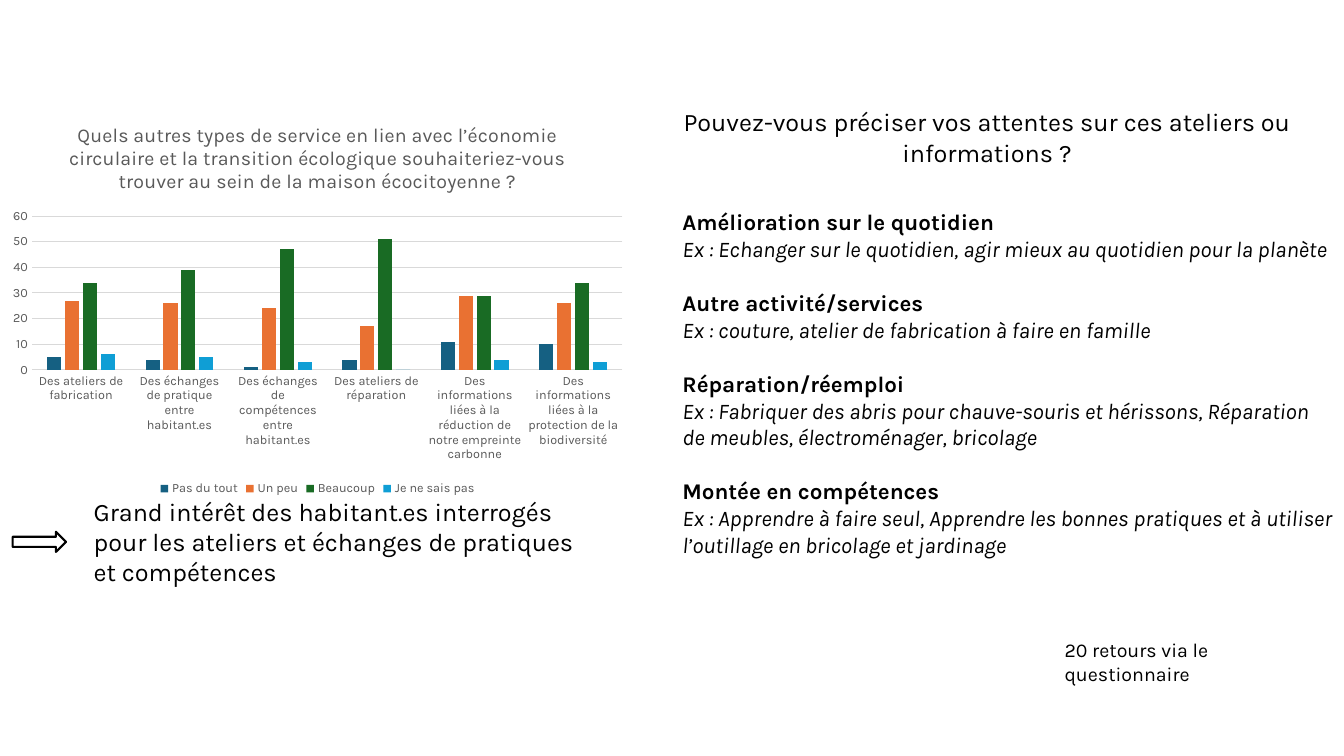
from dataclasses import dataclass

from lxml import etree
from pptx import Presentation
from pptx import util as u
from pptx.chart.data import CategoryChartData
from pptx.dml.color import RGBColor
from pptx.enum import chart as charts, shapes, text


@dataclass(frozen=True)
class Theme:
    font: str = "Karla"
    ink: str = "000000"
    paper: str = "FFFFFF"
    muted: str = "595959"
    rule: str = "D9D9D9"
    heading: int = 18
    body: int = 16
    note: int = 14
    axis: int = 9
    gap: float = 19.2


theme = Theme()


def style_font(font, size, color=theme.ink, bold=False, italic=False):
    formats = {"name": theme.font, "size": u.Pt(size), "bold": bold, "italic": italic}
    for attribute, value in formats.items():
        setattr(font, attribute, value)
    font.color.rgb = RGBColor.from_string(color)


def add_text(box, lines, size, align=text.PP_ALIGN.LEFT):
    frame = slide.shapes.add_textbox(*map(u.Inches, box)).text_frame
    frame.word_wrap = True
    for index, (words, bold, italic) in enumerate(lines):
        paragraph = frame.add_paragraph() if index else frame.paragraphs[0]
        paragraph.alignment = align
        if index and bold:
            paragraph.space_before = u.Pt(theme.gap)
        run = paragraph.add_run()
        run.text = words
        style_font(run.font, size, bold=bold, italic=italic)


presentation = Presentation()
presentation.slide_width = u.Inches(13.33)
presentation.slide_height = u.Inches(7.5)
slide = presentation.slides.add_slide(presentation.slide_layouts[6])

question = "Pouvez-vous préciser vos attentes sur ces ateliers ou informations ?"
add_text((6.24, 1.01, 7.1, 0.71), [(question, False, False)], theme.heading, text.PP_ALIGN.CENTER)

conclusion = "Grand intérêt des habitant.es interrogés pour les ateliers et échanges de pratiques et compétences"
add_text((0.83, 4.87, 5.08, 1.01), [(conclusion, False, False)], theme.heading)

arrow = slide.shapes.add_shape(
    shapes.MSO_SHAPE.DOWN_ARROW, *map(u.Inches, (0.29, 5.11, 0.2, 0.53))
)
arrow.rotation = 270
arrow.shadow.inherit = False
arrow.fill.solid()
arrow.fill.fore_color.rgb = RGBColor.from_string(theme.paper)
arrow.line.color.rgb = RGBColor.from_string(theme.ink)
arrow.line.width = u.Pt(1.5)

add_text((10.46, 6.28, 2.75, 0.34), [("20 retours via le questionnaire", False, False)], theme.note)

answers = {
    "Pas du tout": ("156082", (5, 4, 1, 4, 11, 10)),
    "Un peu": ("E97132", (27, 26, 24, 17, 29, 26)),
    "Beaucoup": ("196B24", (34, 39, 47, 51, 29, 34)),
    "Je ne sais pas": ("0F9ED5", (6, 5, 3, 0, 4, 3)),
}
survey = CategoryChartData()
survey.categories = [
    "Des ateliers de fabrication",
    "Des échanges de pratique entre habitant.es",
    "Des échanges de compétences entre habitant.es",
    "Des ateliers de réparation",
    "Des informations liées à la réduction de notre empreinte carbonne",
    "Des informations liées à la protection de la biodiversité",
]
for answer, (color, counts) in answers.items():
    survey.add_series(answer, counts)
services = slide.shapes.add_chart(
    charts.XL_CHART_TYPE.COLUMN_CLUSTERED, *map(u.Inches, (0, 1.05, 6.3, 3.91)), survey
).chart
style_font(services.font, 10)

services.has_title = True
title = services.chart_title
title.include_in_layout = False
title_run = title.text_frame.paragraphs[0].add_run()
title_run.text = (
    "Quels autres types de service en lien avec l’économie circulaire et la transition "
    "écologique souhaiteriez-vous trouver au sein de la maison écocitoyenne ?"
)
style_font(title_run.font, theme.note, theme.muted)

services.has_legend = True
services.legend.position = charts.XL_LEGEND_POSITION.BOTTOM
services.legend.include_in_layout = False
style_font(services.legend.font, theme.axis, theme.muted)

for axis in (services.category_axis, services.value_axis):
    axis.major_tick_mark = axis.minor_tick_mark = charts.XL_TICK_MARK.NONE
    style_font(axis.tick_labels.font, theme.axis, theme.muted)
counts_axis = services.value_axis
for attribute, value in {"minimum_scale": 0, "maximum_scale": 60, "major_unit": 10}.items():
    setattr(counts_axis, attribute, value)
counts_axis.format.line.fill.background()
for line in (services.category_axis.format.line, counts_axis.major_gridlines.format.line):
    line.color.rgb = RGBColor.from_string(theme.rule)
    line.width = u.Pt(0.75)

bars = services.plots[0]
for attribute, value in {"gap_width": 219, "overlap": -27, "vary_by_categories": False}.items():
    setattr(bars, attribute, value)
for series, (color, counts) in zip(bars.series, answers.values()):
    series.format.fill.solid()
    series.format.fill.fore_color.rgb = RGBColor.from_string(color)

plot_area = services.element.chart.plotArea
for previous in plot_area.findall("{*}layout"):
    plot_area.remove(previous)
chart_ns = "{" + etree.QName(plot_area).namespace + "}"
layout = etree.Element(chart_ns + "layout")
manual = etree.SubElement(layout, chart_ns + "manualLayout")
placement = {
    "layoutTarget": "inner", "xMode": "edge", "yMode": "edge",
    "x": "0.05", "y": "0.28", "w": "0.93", "h": "0.39",
}
for tag, value in placement.items():
    etree.SubElement(manual, chart_ns + tag, val=value)
plot_area.insert(0, layout)

expectations = {
    "Amélioration sur le quotidien":
        "Ex : Echanger sur le quotidien, agir mieux au quotidien pour la planète",
    "Autre activité/services":
        "Ex : couture, atelier de fabrication à faire en famille",
    "Réparation/réemploi":
        "Ex : Fabriquer des abris pour chauve-souris et hérissons, Réparation de meubles, "
        "électroménager, bricolage",
    "Montée en compétences":
        "Ex : Apprendre à faire seul, Apprendre les bonnes pratiques et à utiliser "
        "l’outillage en bricolage et jardinage",
}
expectation_lines = []
for topic, example in expectations.items():
    expectation_lines += [(topic, True, False), (example, False, True)]
add_text((6.67, 2.02, 6.66, 4.01), expectation_lines, theme.body)

presentation.save("out.pptx")
